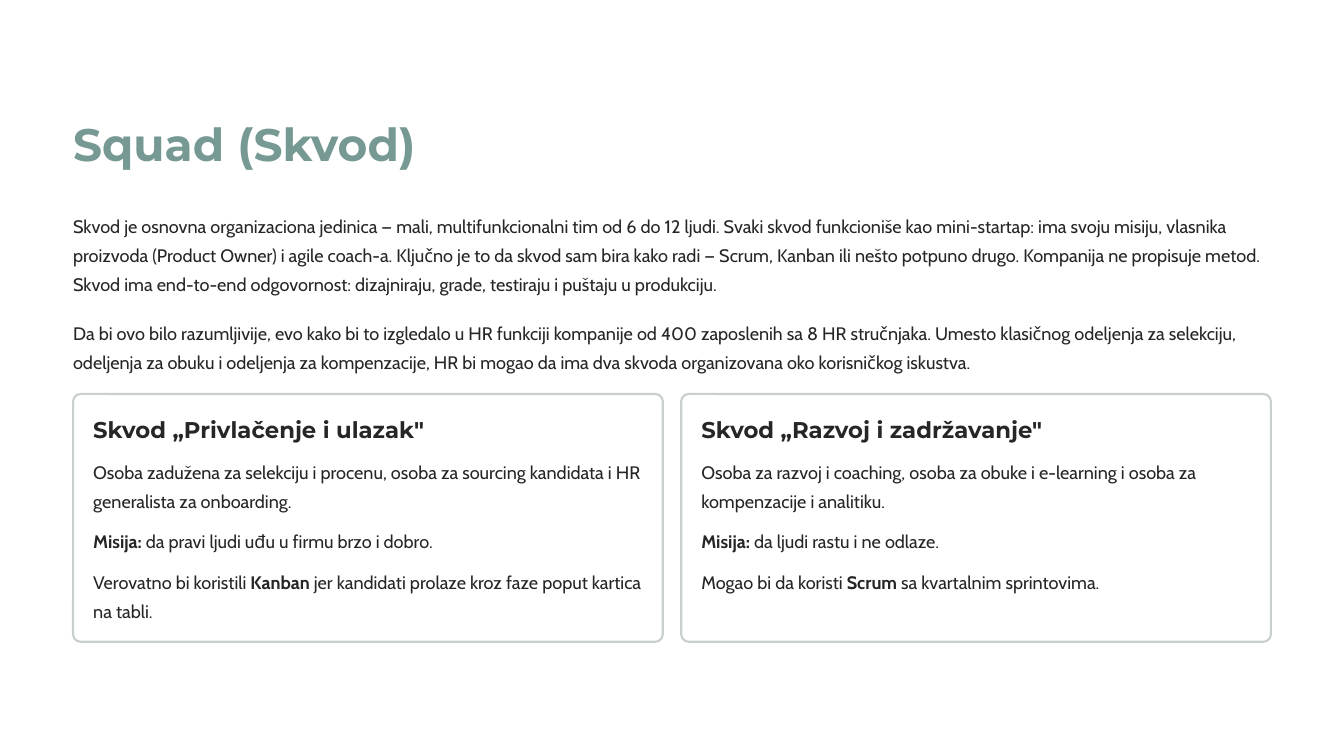
from pptx import Presentation
from pptx.dml.color import RGBColor
from pptx.enum.shapes import MSO_SHAPE
from pptx.util import Inches, Pt

ROUNDED = MSO_SHAPE.ROUNDED_RECTANGLE

TITLE = "Squad (Skvod)"
# (top, height, text)
INTRO = [
    (2.47, 1.04,
     "Skvod je osnovna organizaciona jedinica — mali, multifunkcionalni tim od 6 do 12 ljudi. "
     "Svaki skvod funkcioniše kao mini-startap: ima svoju misiju, vlasnika proizvoda (Product Owner) "
     "i agile coach-a. Ključno je to da skvod sam bira kako radi — Scrum, Kanban ili nešto potpuno "
     "drugo. Kompanija ne propisuje metod. Skvod ima end-to-end odgovornost: dizajniraju, grade, "
     "testiraju i puštaju u produkciju."),
    (3.75, 0.69,
     "Da bi ovo bilo razumljivije, evo kako bi to izgledalo u HR funkciji kompanije od 400 zaposlenih "
     "sa 8 HR stručnjaka. Umesto klasičnog odeljenja za selekciju, odeljenja za obuku i odeljenja za "
     "kompenzacije, HR bi mogao da ima dva skvoda organizovana oko korisničkog iskustva."),
]
# Text between asterisks is bold
SQUADS = [
    ("Skvod „Privlačenje i ulazak\"", [
        "Osoba zadužena za selekciju i procenu, osoba za sourcing kandidata i HR generalista za onboarding.",
        "*Misija:* da pravi ljudi uđu u firmu brzo i dobro.",
        "Verovatno bi koristili *Kanban* jer kandidati prolaze kroz faze poput kartica na tabli."]),
    ("Skvod „Razvoj i zadržavanje\"", [
        "Osoba za razvoj i coaching, osoba za obuke i e-learning i osoba za kompenzacije i analitiku.",
        "*Misija:* da ljudi rastu i ne odlaze.",
        "Mogao bi da koristi *Scrum* sa kvartalnim sprintovima."]),
]

# Text styles: font, size, line spacing, colour, bold
THEME = {
    "title": ("Montserrat", 39, 48.5, "769993", True),
    "heading": ("Montserrat", 19.5, 24, "272525", True),
    "body": ("Cabin", 15.5, 25, "272525", False),
    "paper": "FFFFFF",
    "border": "C8CFCE",
}

LEFT, WIDTH = 0.87, 14.26
CARD_TOP, CARD_W, CARD_H, GAP = 4.69, 7.02, 2.95, 0.22
PAD = 0.24
BODY_ROWS = [(5.4, 0.69), (6.23, 0.35), (6.71, 0.69)]


def rgb(name):
    return RGBColor.from_string(THEME[name])


def add_text(slide, text, style, x, y, w, h):
    font, size, spacing, color, bold = THEME[style]
    tf = slide.shapes.add_textbox(Inches(x), Inches(y), Inches(w), Inches(h)).text_frame
    tf.margin_left = tf.margin_top = tf.margin_right = tf.margin_bottom = 0
    tf.word_wrap = True
    p = tf.paragraphs[0]
    p.line_spacing = Pt(spacing)
    p.font.name, p.font.size, p.font.bold = font, Pt(size), bold
    p.font.color.rgb = RGBColor.from_string(color)
    for i, part in enumerate(text.split("*")):
        if part:
            r = p.add_run()
            r.text = part
            if i % 2:
                r.font.bold = True


def add_card(slide, x, heading, lines):
    sp = slide.shapes.add_shape(ROUNDED, Inches(x), Inches(CARD_TOP), Inches(CARD_W), Inches(CARD_H))
    sp.adjustments[0] = 0.03
    sp.shadow.inherit = False
    sp.fill.solid()
    sp.fill.fore_color.rgb = rgb("paper")
    sp.line.color.rgb = rgb("border")
    sp.line.width = Pt(1.8)
    inner = CARD_W - 2 * PAD
    add_text(slide, heading, "heading", x + PAD, CARD_TOP + 0.25, inner, 0.34)
    for line, (y, h) in zip(lines, BODY_ROWS):
        add_text(slide, line, "body", x + PAD, y, inner, h)


def main():
    prs = Presentation()
    prs.slide_width, prs.slide_height = Inches(16), Inches(9)
    slide = prs.slides.add_slide(prs.slide_layouts[6])
    slide.background.fill.solid()
    slide.background.fill.fore_color.rgb = rgb("paper")

    add_text(slide, TITLE, "title", LEFT, 1.36, 5.43, 0.68)
    for y, h, text in INTRO:
        add_text(slide, text, "body", LEFT, y, WIDTH, h)
    for i, (heading, lines) in enumerate(SQUADS):
        add_card(slide, LEFT + i * (CARD_W + GAP), heading, lines)
    prs.save("out.pptx")


if __name__ == "__main__":
    main()
